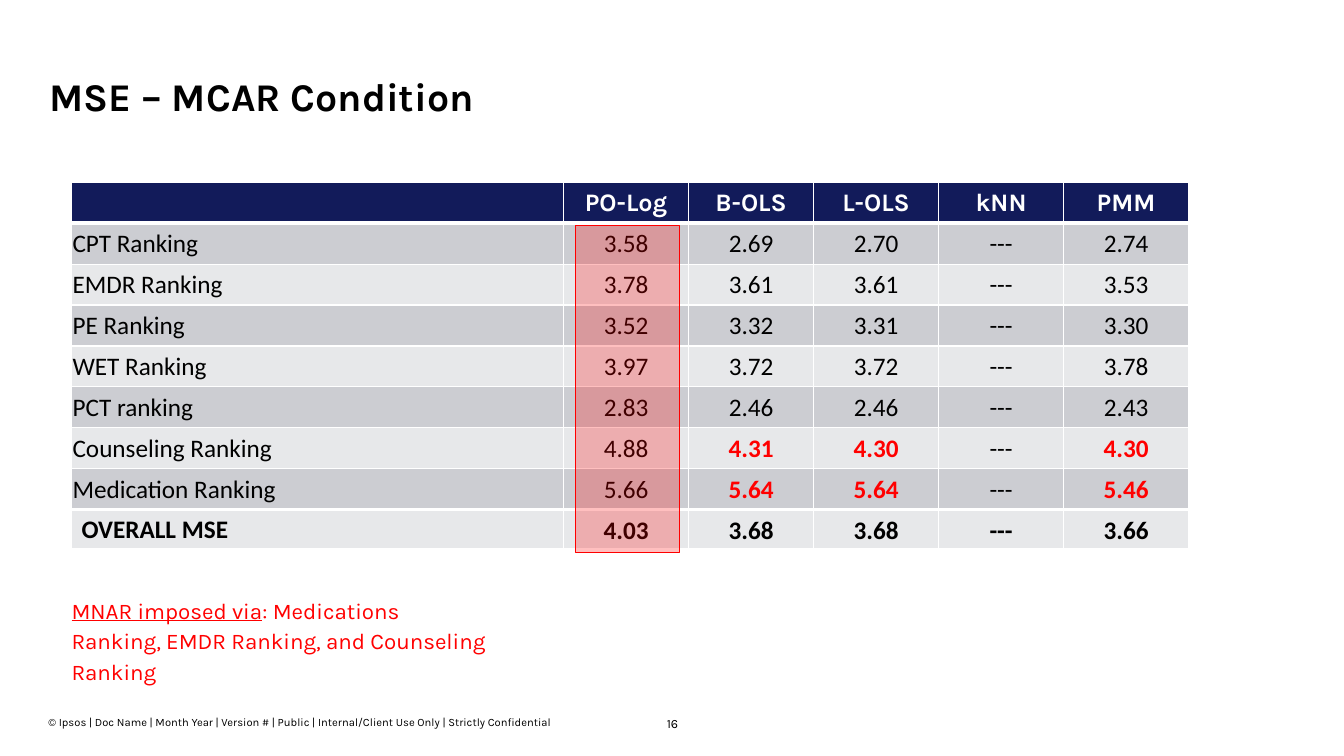
from dataclasses import dataclass

from lxml.etree import SubElement
from pptx import Presentation
from pptx.dml.color import RGBColor
from pptx.enum.shapes import MSO_SHAPE
from pptx.enum.text import MSO_ANCHOR, MSO_AUTO_SIZE, PP_ALIGN
from pptx.oxml.ns import qn
from pptx.util import Inches, Pt


@dataclass(frozen=True)
class Theme:
    black: str = "000000"
    white: str = "FFFFFF"
    navy: str = "121B5A"
    red: str = "FF0000"
    bands: tuple = ("CCCDD2", "E7E8EA")
    head_font: str = "Karla"
    body_font: str = "Calibri"
    title: int = 28
    table: int = 18
    note: int = 16
    number: int = 9
    footer: int = 8


T = Theme()


def write(tf, runs, fmt, margins=(0, 0, 0, 0), anchor=MSO_ANCHOR.TOP, wrap=True):
    """Fill a text frame with one paragraph of (text, size, font, colour, style) runs."""
    sides = ("left", "top", "right", "bottom")
    for side, margin in zip(sides, margins):
        setattr(tf, f"margin_{side}", Inches(margin))
    tf.vertical_anchor, tf.word_wrap = anchor, wrap
    p = tf.paragraphs[0]
    for name, value in fmt.items():
        setattr(p, name, value)
    for text, size, font, color, style in runs:
        r = p.add_run()
        r.text = text
        r.font.color.rgb = RGBColor.from_string(color)
        for name, value in {"size": Pt(size), "name": font, **style}.items():
            setattr(r.font, name, value)


def set_borders(cell, widths):
    """Draw white cell borders from a dict of side to width in points."""
    tc_pr = cell._tc.get_or_add_tcPr()
    for side, width in widths.items():
        ln = SubElement(tc_pr, qn(f"a:ln{side}"), w=str(Pt(width)))
        fill = SubElement(ln, qn("a:solidFill"))
        SubElement(fill, qn("a:srgbClr"), val=T.white)


prs = Presentation()
prs.slide_width, prs.slide_height = Inches(13.33), Inches(7.5)
s = prs.slides.add_slide(prs.slide_layouts[5])

# Title
title = s.shapes.title
title.left, title.top = Inches(0.49), Inches(0.77)
title.width, title.height = Inches(12.36), Inches(0.78)
title.text_frame.auto_size = MSO_AUTO_SIZE.NONE
write(title.text_frame,
      [("MSE – MCAR Condition", T.title, T.head_font, T.black, {"bold": True})],
      {"alignment": PP_ALIGN.LEFT, "line_spacing": 0.9})

# MSE table
rows = [
    ("", "PO-Log", "B-OLS", "L-OLS", "kNN", "PMM"),
    ("CPT Ranking", "3.58", "2.69", "2.70", "---", "2.74"),
    ("EMDR Ranking", "3.78", "3.61", "3.61", "---", "3.53"),
    ("PE Ranking", "3.52", "3.32", "3.31", "---", "3.30"),
    ("WET Ranking", "3.97", "3.72", "3.72", "---", "3.78"),
    ("PCT ranking", "2.83", "2.46", "2.46", "---", "2.43"),
    ("Counseling Ranking", "4.88", "4.31", "4.30", "---", "4.30"),
    ("Medication Ranking", "5.66", "5.64", "5.64", "---", "5.46"),
    ("OVERALL MSE", "4.03", "3.68", "3.68", "---", "3.66"),
]
last = len(rows) - 1
highlighted = {(r, c) for r in (6, 7) for c in (2, 3, 5)}
default_margins, tight_margins = (0.1, 0.05, 0.1, 0.05), (0.01, 0.01, 0.01, 0)

table = s.shapes.add_table(len(rows), len(rows[0]), Inches(0.71), Inches(1.81),
                           Inches(11.1), Inches(3.65)).table
for i, column in enumerate(table.columns):
    column.width = Inches(1.24 if i else 4.88)

for i, values in enumerate(rows):
    header, total = i == 0, i == last
    for j, text in enumerate(values):
        cell = table.cell(i, j)
        set_borders(cell, {"L": 1, "R": 1, "T": 3 if i in (1, last) else 1,
                           "B": 3 if i in (0, last - 1, last) else 1})
        cell.fill.solid()
        cell.fill.fore_color.rgb = RGBColor.from_string(
            T.navy if header else T.bands[(i - 1) % 2])
        marked = (i, j) in highlighted
        color = T.white if header else T.red if marked else T.black
        font = T.head_font if header else T.body_font
        roomy = header or (total and j == 0)
        write(cell.text_frame,
              [(text, T.table, font, color, {"bold": header or total or marked})],
              {"alignment": PP_ALIGN.CENTER if j else PP_ALIGN.LEFT})
        margins = default_margins if roomy else tight_margins
        for side, margin in zip(("left", "top", "right", "bottom"), margins):
            setattr(cell, f"margin_{side}", Inches(margin))
        cell.vertical_anchor = MSO_ANCHOR.BOTTOM if header else MSO_ANCHOR.MIDDLE

# Translucent highlight over the PO-Log column
sp = s.shapes.add_shape(MSO_SHAPE.RECTANGLE, Inches(5.71), Inches(2.24),
                        Inches(1.03), Inches(3.24))
sp.shadow.inherit = False
sp.fill.solid()
sp.fill.fore_color.rgb = sp.line.color.rgb = RGBColor.from_string(T.red)
sp.line.width = Pt(1)
tint = sp.fill._xPr.find(qn("a:solidFill")).find(qn("a:srgbClr"))
SubElement(tint, qn("a:alpha"), val="25000")

# Note, footer and slide number
spaced = {"space_before": Pt(0), "space_after": Pt(4)}
texts = [
    ((0.71, 5.88, 4.14, 0.59),
     [("MNAR imposed via", T.note, T.head_font, T.red, {"underline": True}),
      (": Medications Ranking, EMDR Ranking, and Counseling Ranking",
       T.note, T.head_font, T.red, {})],
     {"line_spacing": 1.15, **spaced}, MSO_ANCHOR.TOP, True),
    ((0.48, 7.1, 5.11, 0.13),
     [("© Ipsos | Doc Name | Month Year | Version # | Public | "
       "Internal/Client Use Only | Strictly Confidential",
       T.footer, T.head_font, T.black, {})],
     {}, MSO_ANCHOR.BOTTOM, False),
    ((6.4, 7.09, 0.54, 0.15),
     [("16", T.number, T.head_font, T.black, {})],
     {"alignment": PP_ALIGN.CENTER, "line_spacing": 1.1, **spaced},
     MSO_ANCHOR.TOP, True),
]
for box, runs, fmt, anchor, wrap in texts:
    tb = s.shapes.add_textbox(*map(Inches, box))
    write(tb.text_frame, runs, fmt, anchor=anchor, wrap=wrap)

prs.save("out.pptx")
